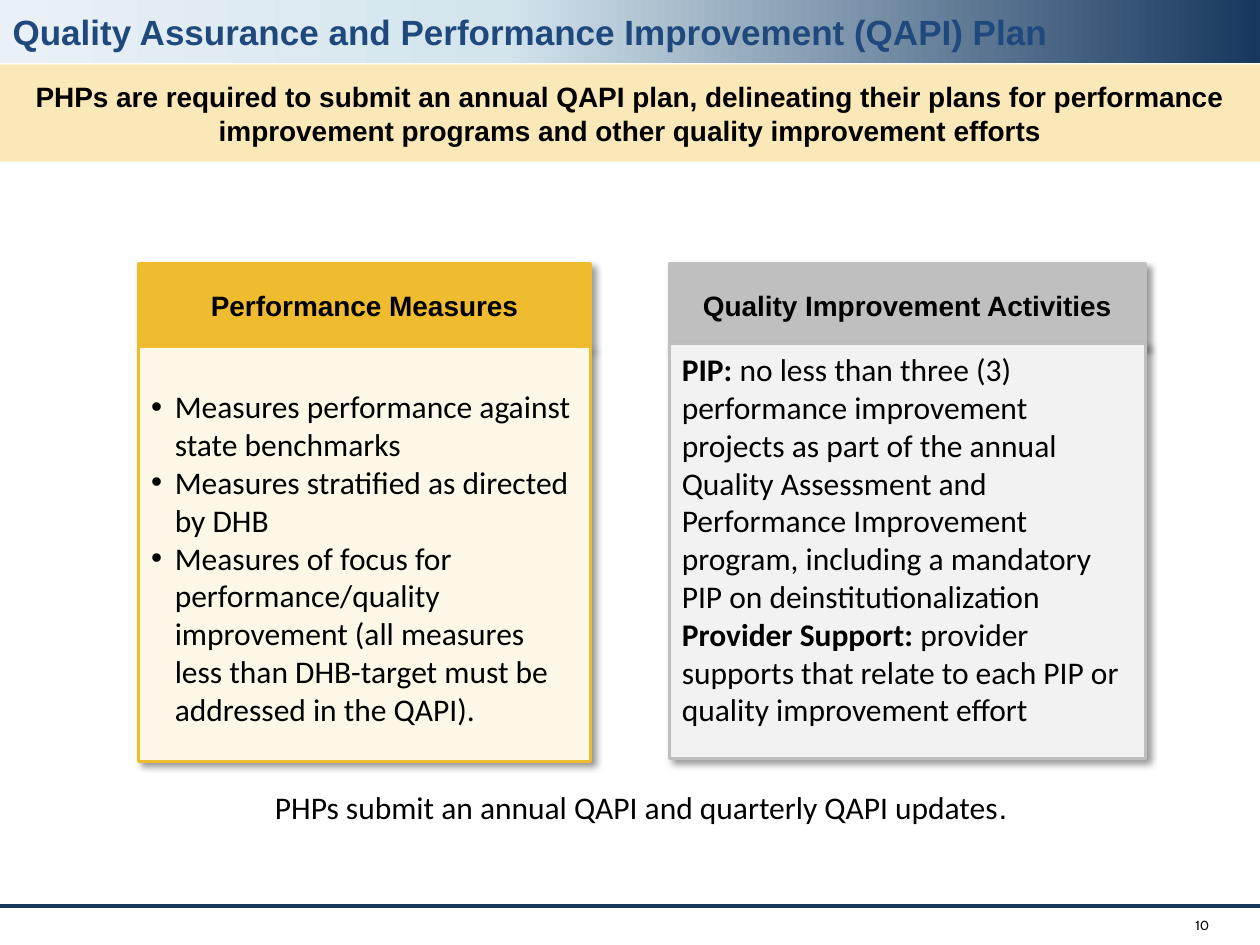
import copy

import lxml.etree
import pptx
import pptx.dml.color
import pptx.enum.shapes
import pptx.enum.text
import pptx.oxml
import pptx.oxml.ns
import pptx.util

Cm, Pt = pptx.util.Cm, pptx.util.Pt
qn = pptx.oxml.ns.qn
ALIGN, ANCHOR = pptx.enum.text.PP_ALIGN, pptx.enum.text.MSO_ANCHOR
RECTANGLE = pptx.enum.shapes.MSO_SHAPE.RECTANGLE

HEADING = {"name": "Arial", "size": Pt(16), "bold": True}
BODY = {"name": "Calibri", "size": Pt(18), "bold": False}
SHADOW = (
    '<a:outerShdw xmlns:a="http://schemas.openxmlformats.org/drawingml/2006/main"'
    ' blurRad="50800" dist="38100" dir="2700000" algn="tl" rotWithShape="0">'
    '<a:srgbClr val="000000"><a:alpha val="40000"/></a:srgbClr></a:outerShdw>'
)


def color(hex_string):
    return pptx.dml.color.RGBColor.from_string(hex_string)


def add_run(paragraph, text, formats, hex_string="000000"):
    run = paragraph.add_run()
    run.text = text
    for attribute, value in formats.items():
        setattr(run.font, attribute, value)
    run.font.color.rgb = color(hex_string)


presentation = pptx.Presentation()
presentation.slide_width, presentation.slide_height = Cm(25.4), Cm(19.05)
slide = presentation.slides.add_slide(presentation.slide_layouts[3])
shapes = slide.shapes
title, left_body, right_body = slide.placeholders

# Title bar, dark on the right
bar = shapes.add_shape(RECTANGLE, 0, 0, Cm(25.4), Cm(1.27))
bar.shadow.inherit = False
bar.line.fill.background()
bar.fill.gradient()
bar.fill.gradient_angle = 180
first_stop = bar.fill.gradient_stops[0]._gs
first_stop.addnext(copy.deepcopy(first_stop))
for stop, (position, hex_string) in zip(
    bar.fill.gradient_stops, [(0, "17375E"), (0.6, "D3E4ED"), (1, "E9F1F6")]
):
    stop.position = position
    stop.color.rgb = color(hex_string)

# Footer rule and page number
rule = shapes.add_connector(
    pptx.enum.shapes.MSO_CONNECTOR.STRAIGHT, 0, Cm(18.26), Cm(25.4), Cm(18.26)
)
rule.line.color.rgb = color("17375E")
rule.line.width = Pt(2.25)
lxml.etree.SubElement(rule._element.spPr, qn("a:effectLst"))

page_number = shapes.add_textbox(Cm(23.06), Cm(18.26), Cm(1.57), Cm(0.79))
page_number.text_frame.word_wrap = True
page_number.text_frame.vertical_anchor = ANCHOR.MIDDLE
paragraph = page_number.text_frame.paragraphs[0]
paragraph.alignment = ALIGN.RIGHT
add_run(paragraph, "10", {"name": "Cabin", "size": Pt(7.5)})

# Key message band
band = shapes.add_shape(RECTANGLE, 0, Cm(1.3), Cm(25.4), Cm(1.96))
band.shadow.inherit = False
band.fill.solid()
band.fill.fore_color.rgb = color("FAE8B8")
band.line.fill.background()
band.text_frame.word_wrap = True
band.text_frame.vertical_anchor = ANCHOR.MIDDLE
paragraph = band.text_frame.paragraphs[0]
paragraph.alignment = ALIGN.CENTER
add_run(
    paragraph,
    "PHPs are required to submit an annual QAPI plan, delineating their plans for "
    "performance improvement programs and other quality improvement efforts",
    HEADING,
)

# Two cards: heading, body placeholder, left, width, body top, inset, colours,
# then paragraphs as (bold lead, text)
cards = [
    ("Performance Measures", left_body, 2.79, 9.12, 6.99, 0.82, "EFBB2F", "FDF7E7", [
        ("", "Measures performance against state benchmarks"),
        ("", "Measures stratified as directed by DHB"),
        ("", "Measures of focus for performance/quality improvement (all measures "
             "less than DHB-target must be addressed in the QAPI)."),
    ]),
    ("Quality Improvement Activities", right_body, 13.49, 9.6, 6.93, 0.13, "BFBFBF", "F2F2F2", [
        ("PIP: ", "no less than three (3) performance improvement projects as part of "
                  "the annual Quality Assessment and Performance Improvement program, "
                  "including a mandatory PIP on deinstitutionalization"),
        ("Provider Support: ", "provider supports that relate to each PIP or quality "
                               "improvement effort"),
    ]),
]
for heading, body, left, width, top, inset, accent, tint, items in cards:
    header = shapes.add_shape(RECTANGLE, Cm(left), Cm(5.31), Cm(width), Cm(1.68))
    header.text_frame.vertical_anchor = ANCHOR.MIDDLE
    paragraph = header.text_frame.paragraphs[0]
    paragraph.alignment = ALIGN.CENTER
    add_run(paragraph, heading, HEADING)

    shapes._spTree.append(body._element)
    body.left, body.top, body.width, body.height = Cm(left), Cm(top), Cm(width), Cm(8.36)
    frame = body.text_frame
    frame.word_wrap = True
    frame.auto_size = pptx.enum.text.MSO_AUTO_SIZE.NONE
    frame.vertical_anchor = ANCHOR.TOP
    frame.margin_top = Cm(inset)
    for index, (lead, text) in enumerate(items):
        paragraph = frame.add_paragraph() if index else frame.paragraphs[0]
        properties = paragraph._p.get_or_add_pPr()
        indent = 0 if lead else Cm(0.48)
        properties.set("marL", str(indent))
        properties.set("indent", str(-indent))
        if lead:
            lxml.etree.SubElement(properties, qn("a:buNone"))
        else:
            lxml.etree.SubElement(properties, qn("a:buFont"), typeface="Arial")
            lxml.etree.SubElement(properties, qn("a:buChar"), char="•")
        paragraph.space_before = Pt(0)
        if lead:
            add_run(paragraph, lead, {**BODY, "bold": True})
        add_run(paragraph, text, BODY)

    for shape, fill in ((header, accent), (body, tint)):
        shape.fill.solid()
        shape.fill.fore_color.rgb = color(fill)
        shape.line.color.rgb = color(accent)
        shape.line.width = Pt(1.5)
        shape.shadow.inherit = False
        effects = shape._element.spPr.find(qn("a:effectLst"))
        effects.append(pptx.oxml.parse_xml(SHADOW))

# Title, in front of its bar
shapes._spTree.append(title._element)
title.left, title.top, title.width, title.height = Cm(-0.74), Cm(0.18), Cm(23.06), Cm(1.52)
title.text_frame.auto_size = pptx.enum.text.MSO_AUTO_SIZE.NONE
title.text_frame.vertical_anchor = ANCHOR.TOP
paragraph = title.text_frame.paragraphs[0]
paragraph.alignment = ALIGN.CENTER
paragraph.line_spacing = 0.9
add_run(
    paragraph,
    "Quality Assurance and Performance Improvement (QAPI) Plan ",
    {**HEADING, "size": Pt(20)},
    "1F497D",
)

# Closing note
note = shapes.add_textbox(Cm(2.79), Cm(15.77), Cm(20.27), Cm(1.02))
note.text_frame.word_wrap = True
paragraph = note.text_frame.paragraphs[0]
paragraph.alignment = ALIGN.CENTER
add_run(paragraph, "PHPs submit an annual QAPI and quarterly QAPI updates", BODY)
add_run(paragraph, ".", {**BODY, "name": "Arial"})

presentation.save("out.pptx")
